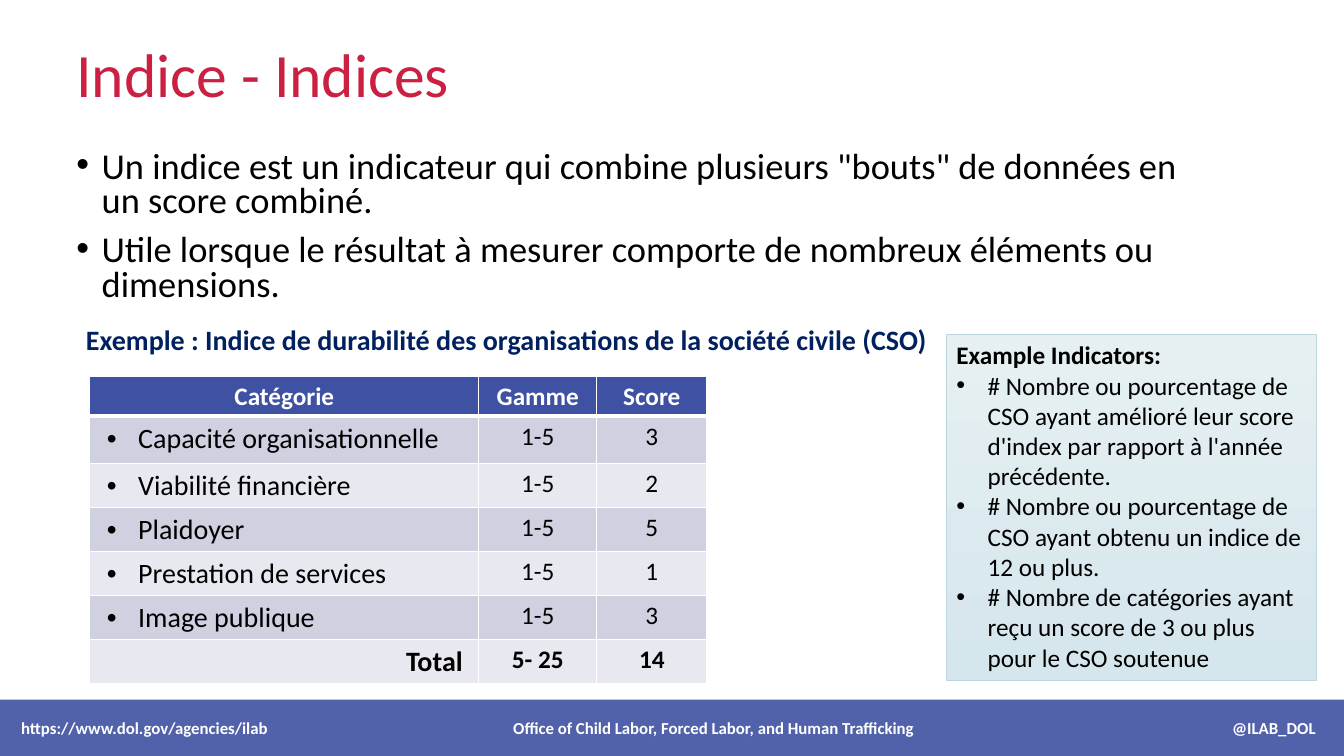
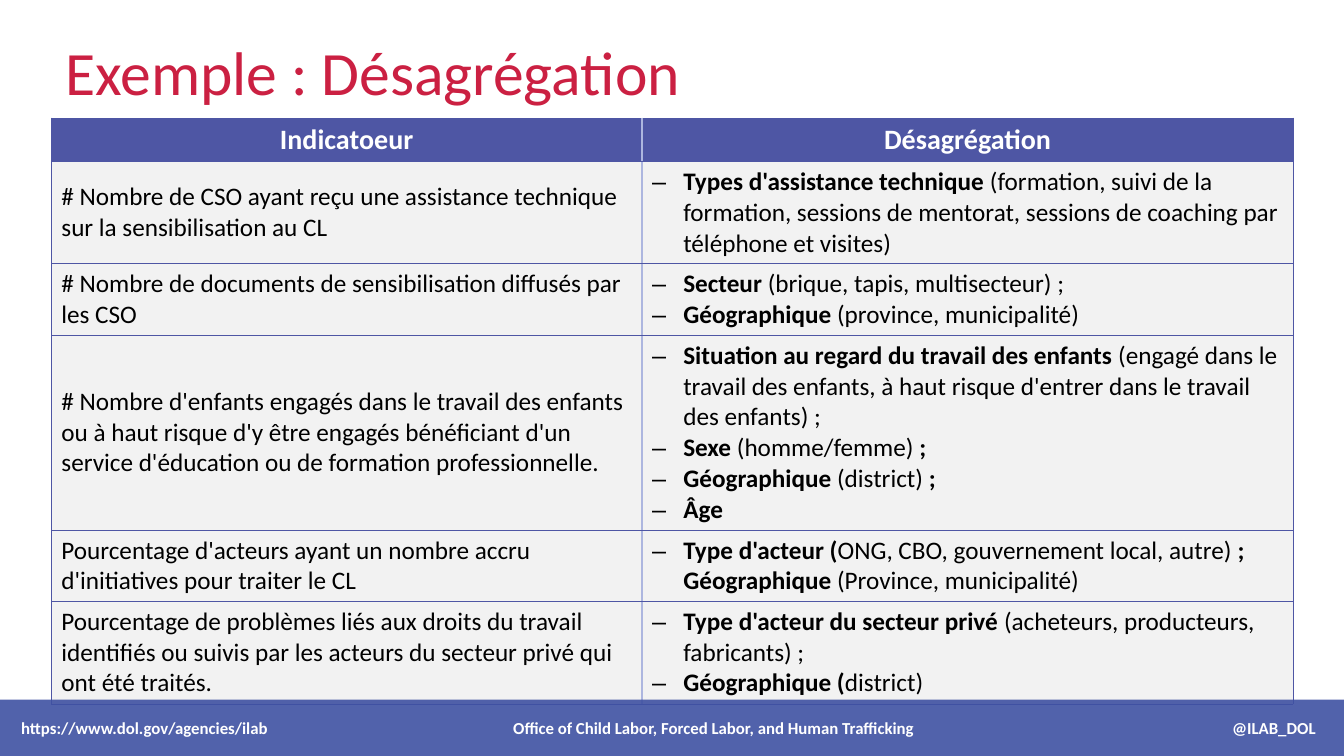
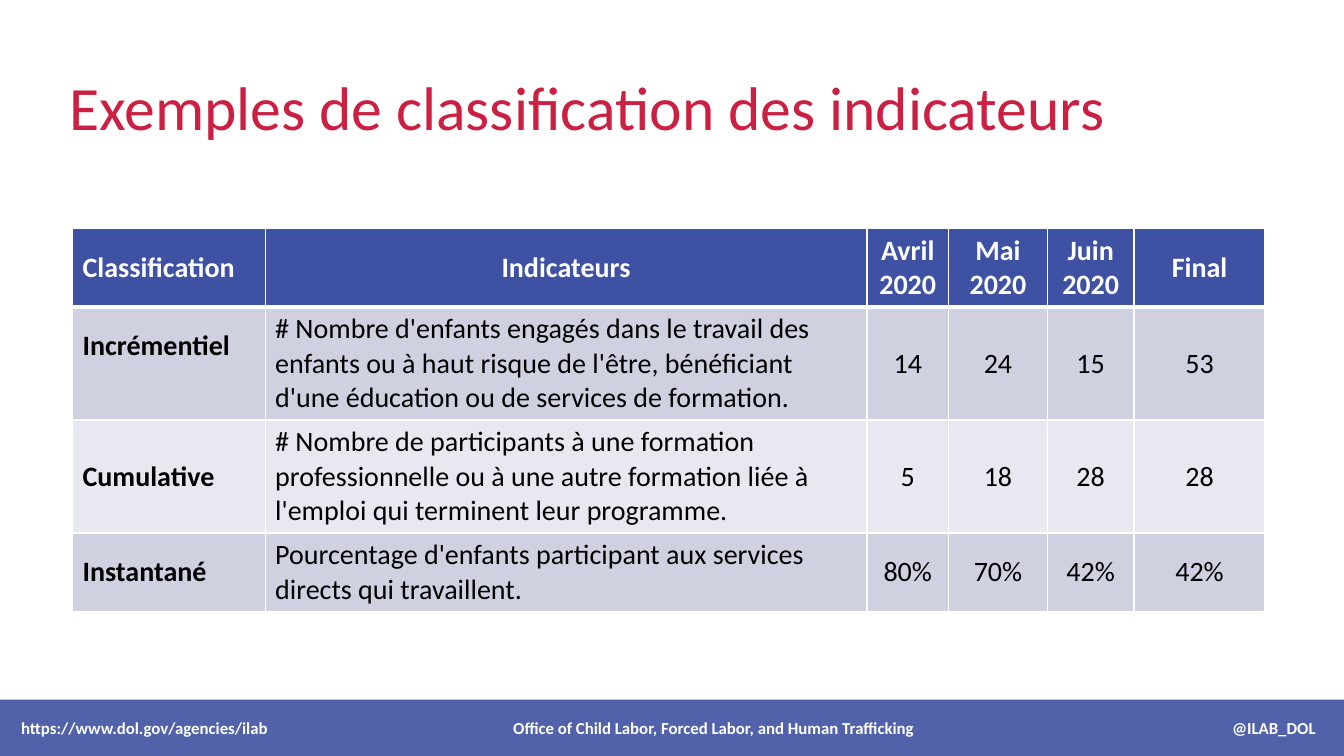
from lxml import etree
from pptx import Presentation
from pptx import util as u
from pptx.dml.color import RGBColor
from pptx.enum import shapes, text
from pptx.oxml import ns

FONT = "Calibri"
RED, NAVY, BLUE, INDIGO = "CB2042", "002060", "3F51A2", "4E56A4"
BLACK, WHITE, GREY, LILAC = "000000", "FFFFFF", "F2F2F2", "ADB6DF"
BANDS = ["CFD0E0", "E8E9F0"]
LEFT, CENTER, RIGHT = text.PP_ALIGN.LEFT, text.PP_ALIGN.CENTER, text.PP_ALIGN.RIGHT
TOP, MIDDLE, BOTTOM = text.MSO_ANCHOR.TOP, text.MSO_ANCHOR.MIDDLE, text.MSO_ANCHOR.BOTTOM

rgb = RGBColor.from_string
deck = Presentation()
deck.slide_width, deck.slide_height = u.Inches(13.33), u.Inches(7.5)


def area(left, top, width, height):
    """Turn percentages of the slide's width and height into lengths."""
    across, down = deck.slide_width / 100, deck.slide_height / 100
    return [round(n) for n in (left * across, top * down, width * across, height * down)]


def write(frame, words, size=18, color=BLACK, bold=False, align=LEFT,
          indent=(0.31, -0.31), line=None, before=None, after=None):
    """Add a paragraph; asterisks switch bold, a leading • or – is its bullet."""
    frame.word_wrap = True
    first = frame.paragraphs[0]
    para = frame.add_paragraph() if first.runs else first
    para.alignment, para.line_spacing = align, line
    para.space_before = None if before is None else u.Pt(before)
    para.space_after = None if after is None else u.Pt(after)
    if words[:2] in ("• ", "– "):
        props = para._p.get_or_add_pPr()
        props.set("marL", str(u.Inches(indent[0])))
        props.set("indent", str(u.Inches(indent[1])))
        etree.SubElement(props, ns.qn("a:buFont"), typeface="Arial")
        etree.SubElement(props, ns.qn("a:buChar"), char=words[0])
        words = words[2:]
    for i, part in enumerate(words.split("*")):
        if part:
            run = para.add_run()
            run.text = part
            run.font.name, run.font.size = FONT, u.Pt(size)
            run.font.bold = bold != (i % 2 == 1)
            run.font.color.rgb = rgb(color)


white_grid = dict(edge=(WHITE, 1), divider=(WHITE, 1), under_header=(WHITE, 3),
                  header_fill=BLUE, bands=BANDS)
blue_grid = dict(edge=(INDIGO, 0.5), divider=(LILAC, 1), under_header=(INDIGO, 0.5),
                 header_fill=INDIGO, bands=[GREY])

# Cells that hold several paragraphs separate them with a line break.
topics = [
    dict(title="Indice - Indices", title_at=(4.95, 1.33, 86.18, 14), look=white_grid,
         at=(6.68, 49.73), columns=[28.95, 8.78, 8.18], heights=[5.2, 6.27] + [5.81] * 5,
         header_size=18, sizes=[20, 18, 18], anchor=TOP,
         header_aligns=[CENTER] * 3, aligns=[LEFT, CENTER, CENTER],
         rows=[["Catégorie", "Gamme", "Score"],
               ["• Capacité organisationnelle", "1-5", "3"],
               ["• Viabilité financière", "1-5", "2"],
               ["• Plaidoyer", "1-5", "5"],
               ["• Prestation de services", "1-5", "1"],
               ["• Image publique", "1-5", "3"],
               ["*Total*", "*5- 25*", "*14*"]]),
    dict(title="Exemple : Désagrégation", title_at=(4.12, 1.07, 86.78, 14), look=blue_grid,
         at=(3.82, 15.6), columns=[43.95, 48.45], heights=[5.8, 13.43, 9.5, 25.8, 9.4, 13.6],
         header_size=20, sizes=[18, 18], anchor=MIDDLE,
         header_aligns=[CENTER] * 2, aligns=[LEFT] * 2,
         rows=[["Indicatoeur", "Désagrégation"],
               ["# Nombre de CSO ayant reçu une assistance technique sur la sensibilisation au CL",
                "– *Types d'assistance technique *(formation, suivi de la formation, sessions de "
                "mentorat, sessions de coaching par téléphone et visites)"],
               ["# Nombre de documents de sensibilisation diffusés par les CSO",
                "– *Secteur *(brique, tapis, multisecteur) ;\n"
                "– *Géographique *(province, municipalité)"],
               ["# Nombre d'enfants engagés dans le travail des enfants ou à haut risque d'y être "
                "engagés bénéficiant d'un service d'éducation ou de formation professionnelle.",
                "– *Situation au regard du travail des enfants *(engagé dans le travail des "
                "enfants, à haut risque d'entrer dans le travail des enfants) ;\n"
                "– *Sexe *(homme/femme) *;*\n"
                "– *Géographique *(district) *;*\n"
                "– *Âge*"],
               ["Pourcentage d'acteurs ayant un nombre accru d'initiatives pour traiter le CL",
                "– *Type d'acteur (*ONG, CBO, gouvernement local, autre)* ; Géographique *"
                "(Province, municipalité)"],
               ["Pourcentage de problèmes liés aux droits du travail identifiés ou suivis par les "
                "acteurs du secteur privé qui ont été traités.",
                "– *Type d'acteur du secteur privé *(acheteurs, producteurs, fabricants) ;\n"
                "– *Géographique (*district)"]]),
    dict(title="Exemples de classification des indicateurs", title_at=(4.42, 5.73, 84.68, 14),
         look=white_grid, at=(5.4, 30.27), columns=[14.33, 44.78, 6.08, 7.35, 6.45, 9.75],
         heights=[10.35, 14.95, 14.95, 10.35],
         header_size=20, sizes=[20] * 6, anchor=MIDDLE,
         header_aligns=[LEFT] + [CENTER] * 5, aligns=[LEFT] * 2 + [CENTER] * 4,
         rows=[["Classification", "Indicateurs", "Avril 2020", "Mai 2020", "Juin 2020", "Final"],
               ["*Incrémentiel*",
                "# Nombre d'enfants engagés dans le travail des enfants ou à haut risque de "
                "l'être, bénéficiant d'une éducation ou de services de formation.",
                "14", "24", "15", "53"],
               ["*Cumulative*",
                "# Nombre de participants à une formation professionnelle ou à une autre "
                "formation liée à l'emploi qui terminent leur programme.",
                "5", "18", "28", "28"],
               ["*Instantané*",
                "Pourcentage d'enfants participant aux services directs qui travaillent.",
                "80%", "70%", "42%", "42%"]]),
]

slides, tables = [], []
for topic in topics:
    slide = deck.slides.add_slide(deck.slide_layouts[6])
    slides.append(slide)
    title = slide.shapes.add_textbox(*area(*topic["title_at"])).text_frame
    title.vertical_anchor = BOTTOM
    write(title, topic["title"], size=44, color=RED, line=0.9)

    rows, columns, heights, look = (topic[k] for k in ("rows", "columns", "heights", "look"))
    table = slide.shapes.add_table(
        len(rows), len(columns), *area(*topic["at"], sum(columns), sum(heights))).table
    tables.append(table)
    table.first_row = table.horz_banding = False
    for column, share in zip(table.columns, columns):
        column.width = area(0, 0, share, 0)[2]
    for row, share in zip(table.rows, heights):
        row.height = area(0, 0, 0, share)[3]

    for r, row in enumerate(rows):
        for c, words in enumerate(row):
            cell, header = table.cell(r, c), r == 0
            borders = {
                "lnL": look["divider"] if c else look["edge"],
                "lnR": look["divider"] if c < len(columns) - 1 else look["edge"],
                "lnT": look["under_header"] if r == 1 else look["edge"],
                "lnB": look["under_header"] if header else look["edge"],
            }
            for side, (color, width) in borders.items():
                border = etree.SubElement(cell._tc.get_or_add_tcPr(), ns.qn("a:" + side),
                                          w=str(u.Pt(width)))
                paint = etree.SubElement(border, ns.qn("a:solidFill"))
                etree.SubElement(paint, ns.qn("a:srgbClr"), val=color)
            cell.fill.solid()
            cell.fill.fore_color.rgb = rgb(
                look["header_fill"] if header else look["bands"][(r - 1) % len(look["bands"])])
            cell.vertical_anchor = MIDDLE if header else topic["anchor"]
            for line in words.split("\n"):
                write(cell.text_frame, line, bold=header, color=WHITE if header else BLACK,
                      size=topic["header_size"] if header else topic["sizes"][c],
                      align=topic["header_aligns" if header else "aligns"][c],
                      indent=(0.38, -0.31) if line[0] == "•" else (0.31, -0.31))

    footer = slide.shapes.add_shape(shapes.MSO_SHAPE.RECTANGLE, *area(0, 92.53, 100, 7.47))
    footer.shadow.inherit = False
    footer.line.fill.background()
    footer.fill.solid()
    footer.fill.fore_color.rgb = rgb(BLUE)
    tint = footer._element.spPr.find(".//" + ns.qn("a:srgbClr"))
    etree.SubElement(tint, ns.qn("a:alpha"), val="90000")
    footer.text_frame.margin_left = u.Inches(0.21)
    footer.text_frame.vertical_anchor = MIDDLE
    write(footer.text_frame,
          "https://www.dol.gov/agencies/ilab\t"
          "Office of Child Labor, Forced Labor, and Human Trafficking\t@ILAB_DOL",
          size=12, color=WHITE, bold=True)
    stops = etree.SubElement(footer.text_frame.paragraphs[0]._p.get_or_add_pPr(),
                             ns.qn("a:tabLst"))
    for place, kind in ((6.87, "ctr"), (12.84, "r")):
        etree.SubElement(stops, ns.qn("a:tab"), pos=str(u.Inches(place)), algn=kind)

index_slide = slides[0]
total = tables[0].cell(6, 0)
total.text_frame.paragraphs[0].alignment = RIGHT
total.margin_right = u.Inches(0.16)
tables[2].cell(1, 0).margin_bottom = u.Inches(0.39)

definition = index_slide.shapes.add_textbox(*area(4.95, 19.33, 86.18, 22.67)).text_frame
for point in (
        "• Un indice est un indicateur qui combine plusieurs \"bouts\" de données en un score "
        "combiné.",
        "• Utile lorsque le résultat à mesurer comporte de nombreux éléments ou dimensions."):
    write(definition, point, size=26, indent=(0.25, -0.25), line=0.8, before=10)

caption = index_slide.shapes.add_textbox(*area(4.95, 42, 65.48, 5.87)).text_frame
write(caption, "Exemple : Indice de durabilité des organisations de la société civile (CSO)",
      size=20, color=NAVY, bold=True, align=CENTER, after=6)

indicators = index_slide.shapes.add_shape(
    shapes.MSO_SHAPE.RECTANGLE, *area(70.43, 44.27, 27.52, 45.73))
indicators.shadow.inherit = False
indicators.fill.gradient()
indicators.fill.gradient_angle = 270
for stop, color in zip(indicators.fill.gradient_stops, ("E6F0F3", "D5E6EC")):
    stop.color.rgb = rgb(color)
indicators.line.color.rgb = rgb("BCD6E0")
indicators.line.width = u.Pt(0.5)
indicators.text_frame.vertical_anchor = TOP
for line in (
        "*Example Indicators:*",
        "• # Nombre ou pourcentage de CSO ayant amélioré leur score d'index par rapport à "
        "l'année précédente.",
        "• # Nombre ou pourcentage de CSO ayant obtenu un indice de 12 ou plus.",
        "• # Nombre de catégories ayant reçu un score de 3 ou plus pour le CSO soutenue"):
    write(indicators.text_frame, line)

deck.save("out.pptx")
